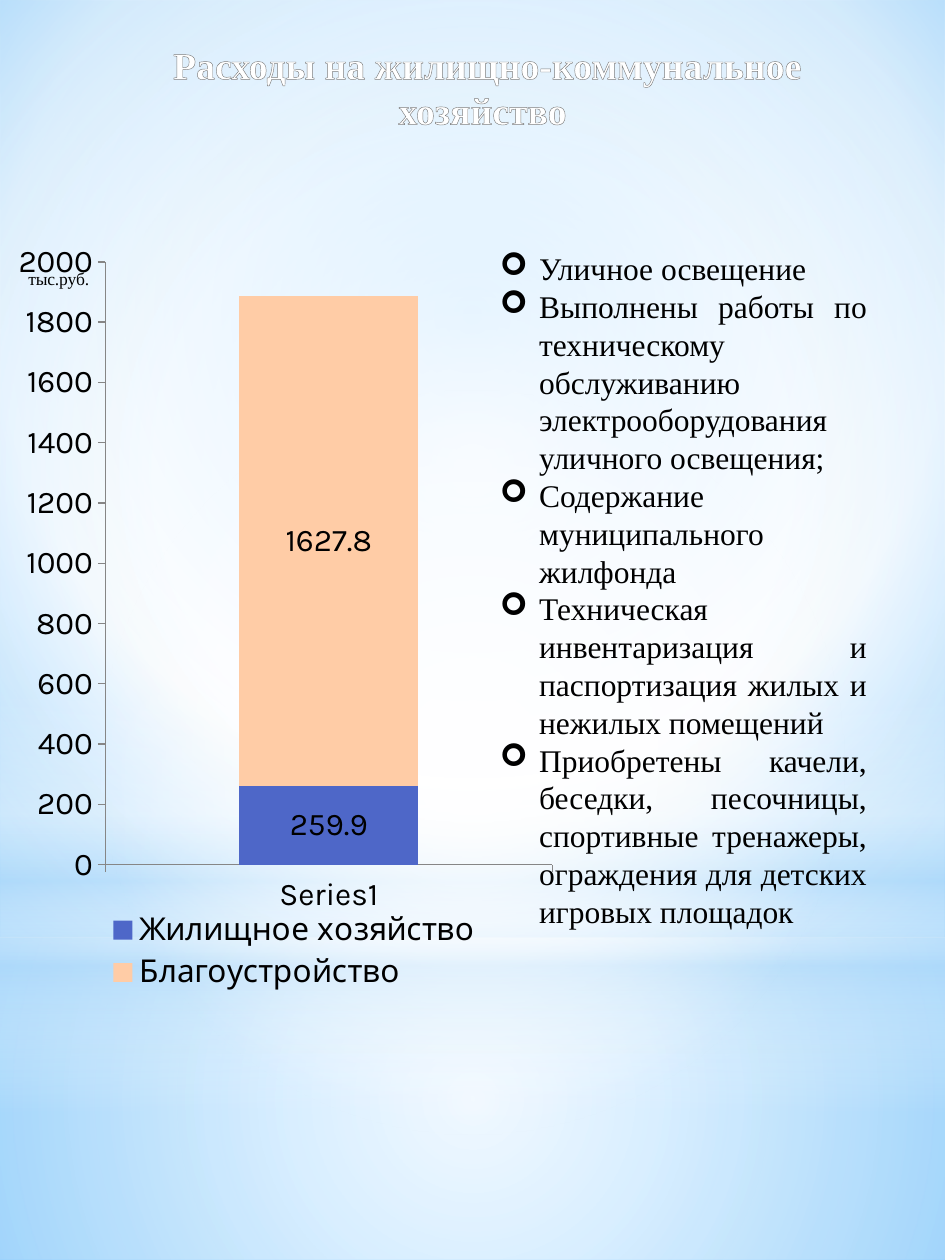
from lxml import etree
from pptx import Presentation
from pptx.chart.data import CategoryChartData
from pptx.dml.color import RGBColor
from pptx.enum.chart import XL_CHART_TYPE as ChartType, XL_LEGEND_POSITION as LegendPos
from pptx.enum.chart import XL_TICK_MARK as Tick
from pptx.enum.shapes import MSO_SHAPE as Shape
from pptx.enum.text import MSO_ANCHOR as Anchor, MSO_AUTO_SIZE as AutoSize, PP_ALIGN as Align
from pptx.oxml import parse_xml
from pptx.oxml.ns import nsdecls, qn
from pptx.util import Cm, Pt

rgb = RGBColor.from_string
SERIF = "Times New Roman"


def gradient(stops, center=None):
    """Radial gradient around center (left, top, right, bottom in %), else vertical."""
    marks = "".join(
        f'<a:gs pos="{pos * 1000}"><a:srgbClr val="{color}">'
        f'<a:alpha val="{alpha * 1000}"/></a:srgbClr></a:gs>'
        for pos, color, alpha in stops)
    if center:
        sides = " ".join(f'{side}="{value * 1000}"' for side, value in zip("ltrb", center))
        direction = f'<a:path path="circle"><a:fillToRect {sides}/></a:path>'
    else:
        direction = '<a:lin ang="5400000" scaled="0"/>'
    return parse_xml(f'<a:gradFill {nsdecls("a")} rotWithShape="1">'
                     f'<a:gsLst>{marks}</a:gsLst>{direction}</a:gradFill>')


def place(part, index, inner=False, **box):
    """Give a chart part a manual layout in fractions of the chart."""
    for old in part.findall(qn("c:layout")):
        part.remove(old)
    target = '<c:layoutTarget val="inner"/>' if inner else ""
    modes = '<c:xMode val="edge"/><c:yMode val="edge"/>'
    values = "".join(f'<c:{key} val="{value}"/>' for key, value in box.items())
    part.insert(index, parse_xml(f'<c:layout {nsdecls("c")}><c:manualLayout>'
                                 f'{target}{modes}{values}</c:manualLayout></c:layout>'))


prs = Presentation()
prs.slide_width, prs.slide_height = Cm(19.05), Cm(25.4)
slide = prs.slides.add_slide(prs.slide_layouts[5])

# Sky background
slide.background.fill.solid()
backdrop = slide._element.xpath(".//p:bgPr")[0]
backdrop.replace(backdrop[0], gradient(
    [(0, "9ED5FF", 100), (60, "FFFFFF", 100), (100, "5BB9FF", 100)], (20, 10, 20, 60)))

# Translucent layers of light: shape, top, height, stops, centre
middle = (50, 50, 50, 50)
layers = [
    (Shape.RECTANGLE, 18.9, 6.5,
     [(0, "FFFFFF", 91), (37, "FFFFFF", 76), (100, "B4DCFA", 79)], middle),
    (Shape.RECTANGLE, 0, 18.9,
     [(0, "FFFFFF", 89), (48, "FFFFFF", 62), (100, "B4DCFA", 79)], middle),
    (Shape.RECTANGLE, 13.94, 8.46,
     [(0, "FFFFFF", 0), (29, "FFFFFF", 30), (45, "B4DCFA", 40),
      (55, "FFFFFF", 26), (65, "B4DCFA", 60), (100, "FFFFFF", 0)], None),
    (Shape.OVAL, 5.92, 18.9, [(0, "FFFFFF", 100), (56, "FFFFFF", 0)], middle),
]
for kind, top, height, stops, center in layers:
    layer = slide.shapes.add_shape(kind, 0, Cm(top), prs.slide_width, Cm(height))
    layer.shadow.inherit = False
    layer.line.fill.background()
    layer._element.spPr.insert(2, gradient(stops, center))

# Spending chart
spending = CategoryChartData()
spending.categories = ["Series1"]
spending.add_series("Жилищное хозяйство", [259.9])
spending.add_series("Благоустройство", [1627.8])
chart = slide.shapes.add_chart(ChartType.COLUMN_STACKED, Cm(0.33), Cm(4.9),
                               Cm(11.2), Cm(15.19), spending).chart
for key, value in {"name": "Karla", "size": Pt(18)}.items():
    setattr(chart.font, key, value)
chart.font.color.rgb = rgb("000000")
chart.has_title = False

plot = chart.plots[0]
for key, value in {"gap_width": 150, "overlap": 100, "vary_by_categories": False,
                   "has_data_labels": True}.items():
    setattr(plot, key, value)
plot.data_labels.show_value = True
for series, color in zip(plot.series, ["4E67C8", "FFCCA6"]):
    series.format.fill.solid()
    series.format.fill.fore_color.rgb = rgb(color)
place(chart._chartSpace.chart.plotArea, 0, inner=True, x=0.16, y=0.025, w=0.805, h=0.8)

# Axes
amounts = chart.value_axis
for key, value in {"minimum_scale": 0, "maximum_scale": 2000, "major_unit": 200}.items():
    setattr(amounts, key, value)
for axis in (amounts, chart.category_axis):
    axis.has_major_gridlines = False
    axis.major_tick_mark = Tick.OUTSIDE
    axis.minor_tick_mark = Tick.NONE
    axis.format.line.color.rgb = rgb("868686")
    axis.format.line.width = Pt(0.75)

unit = amounts.axis_title
unit.text_frame.text = "тыс.руб."
unit_font = unit.text_frame.paragraphs[0].runs[0].font
for key, value in {"name": SERIF, "size": Pt(10), "bold": False}.items():
    setattr(unit_font, key, value)
unit_font.color.rgb = rgb("000000")
unit_body = unit.text_frame._txBody.bodyPr
unit_body.set("rot", "0")
unit_body.set("vert", "horz")
place(unit._element, 1, x=0.016, y=0.029)

# Legend
chart.has_legend = True
chart.legend.position = LegendPos.BOTTOM
chart.legend.include_in_layout = False
place(chart.legend._element, 1, x=0.15, y=0.88, w=0.7, h=0.12)

# Title, in front of the layers
title = slide.shapes.title
slide.shapes._spTree.append(title._element)
for key, value in {"left": Cm(1.52), "top": Cm(0.71),
                   "width": Cm(16.61), "height": Cm(2.11)}.items():
    setattr(title, key, value)
title.text_frame.text = "Расходы на жилищно-коммунальное хозяйство "
heading = title.text_frame.paragraphs[0]
heading.alignment = Align.CENTER
heading_font = heading.runs[0].font
for key, value in {"name": SERIF, "size": Pt(21.6), "bold": True}.items():
    setattr(heading_font, key, value)
heading_font.color.rgb = rgb("FFFFFF")
heading_font._element.insert(0, parse_xml(
    f'<a:ln {nsdecls("a")} w="10541"><a:solidFill><a:srgbClr val="7D7D7D"/>'
    '</a:solidFill></a:ln>'))

# List of works
works = [
    "Уличное освещение",
    "Выполнены работы по техническому обслуживанию электрооборудования уличного освещения;",
    "Содержание муниципального жилфонда",
    "Техническая инвентаризация и паспортизация жилых и нежилых помещений",
    "Приобретены качели, беседки, песочницы, спортивные тренажеры, "
    "ограждения для детских игровых площадок",
]
works_box = slide.shapes.add_textbox(Cm(9.83), Cm(4.9), Cm(7.9), Cm(14.1))
for frame in (title.text_frame, works_box.text_frame):
    for key, value in {"word_wrap": True, "vertical_anchor": Anchor.TOP,
                       "auto_size": AutoSize.SHAPE_TO_FIT_TEXT}.items():
        setattr(frame, key, value)
works_box.text_frame.text = "\n".join(works)
for work in works_box.text_frame.paragraphs:
    work.alignment = Align.JUSTIFY
    work_font = work.runs[0].font
    for key, value in {"name": SERIF, "size": Pt(18)}.items():
        setattr(work_font, key, value)
    work_font.color.rgb = rgb("000000")
    indent = work._p.get_or_add_pPr()
    indent.set("marL", str(Cm(0.79)))
    indent.set("indent", str(-Cm(0.79)))
    etree.SubElement(indent, qn("a:buFont")).set("typeface", "Wingdings")
    etree.SubElement(indent, qn("a:buChar")).set("char", "➢")

prs.save("out.pptx")
